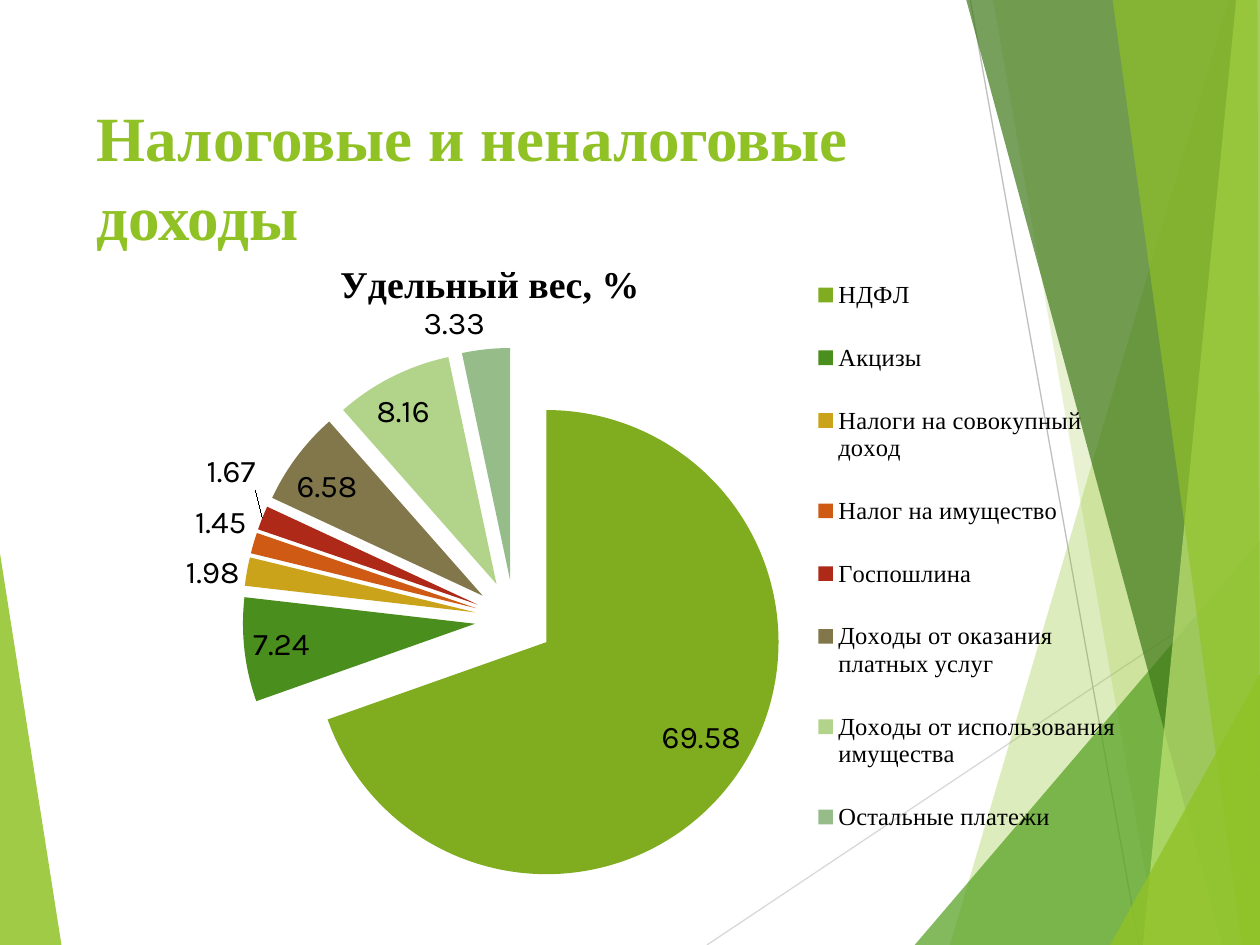
from dataclasses import dataclass

import lxml.etree
import pptx
import pptx.chart.data
import pptx.dml.color
import pptx.enum.chart
import pptx.enum.shapes
import pptx.enum.text
import pptx.oxml.ns
import pptx.oxml.xmlchemy
import pptx.util

Cm = pptx.util.Cm
Pt = pptx.util.Pt
RGBColor = pptx.dml.color.RGBColor
OxmlElement = pptx.oxml.xmlchemy.OxmlElement
qn = pptx.oxml.ns.qn

W, H = 25.4, 19.05
SERIF = "Times New Roman"
SANS = "Karla"

BLACK = RGBColor(0x00, 0x00, 0x00)
LIME = RGBColor(0x90, 0xC2, 0x26)
GREEN = RGBColor(0x54, 0xA0, 0x21)
FOREST = RGBColor(0x3F, 0x78, 0x19)
PALE_LIME = RGBColor(0xC0, 0xE4, 0x74)
GREY = RGBColor(0xBF, 0xBF, 0xBF)
LIGHT_GREY = RGBColor(0xD9, 0xD9, 0xD9)


@dataclass
class Facet:
    points: list[tuple[float, float]]
    color: RGBColor
    opacity: int


@dataclass
class Ray:
    start: tuple[float, float]
    end: tuple[float, float]
    color: RGBColor


@dataclass
class Slice:
    name: str
    value: float
    color: RGBColor


LEFT_FACET = Facet([(0, 11.15), (1.24, H), (0, H)], LIME, 85)
RAYS = [
    Ray((14.25, H), (W, 11.61), LIGHT_GREY),
    Ray((19.56, 0), (22.96, H), GREY),
]
RIGHT_FACETS = [
    Facet([(24.77, 0), (19.15, H), (W, H), (W, 0)], LIME, 30),
    Facet([(20.02, 0), (23.34, H), (W, H), (W, 0)], LIME, 20),
    Facet([(18.44, H), (W, 10.9), (W, H)], GREEN, 72),
    Facet([(19.48, 0), (24.64, H), (W, H), (W, 0)], FOREST, 70),
    Facet([(24.92, 0), (23.04, H), (W, H), (W, 0)], PALE_LIME, 70),
    Facet([(22.43, 0), (25.04, H), (W, H), (25.35, 0)], LIME, 65),
    Facet([(22.38, H), (W, 13.59), (W, H)], LIME, 80),
]
SLICES = [
    Slice("НДФЛ", 69.58, RGBColor(0x80, 0xAC, 0x20)),
    Slice("Акцизы", 7.24, RGBColor(0x4A, 0x8E, 0x1D)),
    Slice("Налоги на совокупный доход", 1.98, RGBColor(0xCB, 0xA3, 0x1A)),
    Slice("Налог на имущество", 1.45, RGBColor(0xCE, 0x5A, 0x14)),
    Slice("Госпошлина", 1.67, RGBColor(0xAE, 0x29, 0x17)),
    Slice("Доходы от оказания платных услуг", 6.58, RGBColor(0x81, 0x77, 0x4B)),
    Slice("Доходы от использования имущества", 8.16, RGBColor(0xB2, 0xD3, 0x8A)),
    Slice("Остальные платежи", 3.33, RGBColor(0x96, 0xBC, 0x8A)),
]


def draw_facet(slide, facet: Facet) -> None:
    points = [(Cm(x), Cm(y)) for x, y in facet.points]
    builder = slide.shapes.build_freeform(*points[0])
    builder.add_line_segments(points[1:])
    sp = builder.convert_to_shape()
    sp.shadow.inherit = False
    sp.line.fill.background()
    sp.fill.solid()
    sp.fill.fore_color.rgb = facet.color
    clr = sp._element.spPr.find(qn("a:solidFill")).find(qn("a:srgbClr"))
    lxml.etree.SubElement(clr, qn("a:alpha"), val=str(facet.opacity * 1000))


def draw_ray(slide, ray: Ray) -> None:
    ends = [Cm(v) for v in (*ray.start, *ray.end)]
    line = slide.shapes.add_connector(pptx.enum.shapes.MSO_CONNECTOR.STRAIGHT, *ends)
    line.line.color.rgb = ray.color
    line.line.width = Pt(0.75)
    lxml.etree.SubElement(line._element.spPr, qn("a:effectLst"))


def write_title(slide, text: str) -> None:
    title = slide.shapes.title
    title.left, title.top, title.width, title.height = Cm(1.7), Cm(1.7), Cm(19), Cm(3.66)
    tf = title.text_frame
    tf.text = text
    tf.word_wrap = True
    tf.auto_size = pptx.enum.text.MSO_AUTO_SIZE.NONE
    tf.vertical_anchor = pptx.enum.text.MSO_ANCHOR.TOP
    tf.margin_top = Cm(0.2)
    p = tf.paragraphs[0]
    p.alignment = pptx.enum.text.PP_ALIGN.LEFT
    p.line_spacing = 1.05
    set_font(p.font, SERIF, 36, LIME, True)
    slide.shapes._spTree.append(title._element)


def set_font(font, name: str, size: float, color: RGBColor, bold: bool = False) -> None:
    font.name, font.size, font.bold = name, Pt(size), bold
    font.color.rgb = color


def chart_layout(inner: bool = False, **fractions: float):
    """Return a manual layout in fractions of the chart frame."""
    layout = OxmlElement("c:layout")
    manual = lxml.etree.SubElement(layout, qn("c:manualLayout"))
    values = {"layoutTarget": "inner"} if inner else {}
    values |= {"xMode": "edge", "yMode": "edge"} | fractions
    for tag, value in values.items():
        lxml.etree.SubElement(manual, qn("c:" + tag), val=str(value))
    return layout


def place(parent, layout, after: str = "") -> None:
    """Put the layout after the named child, or first, replacing any other."""
    for old in parent.findall(qn("c:layout")):
        parent.remove(old)
    if after:
        parent.find(qn(after)).addnext(layout)
    else:
        parent.insert(0, layout)


def draw_pie(slide, slices: list[Slice], heading: str) -> None:
    data = pptx.chart.data.CategoryChartData(number_format="0.00")
    data.categories = [s.name for s in slices]
    data.add_series(heading, [s.value for s in slices])
    chart = slide.shapes.add_chart(
        pptx.enum.chart.XL_CHART_TYPE.PIE,
        Cm(1.7), Cm(4.11), Cm(22.81), Cm(14.2), data,
    ).chart
    set_font(chart.font, SANS, 18, BLACK)

    chart.has_title = True
    tf = chart.chart_title.text_frame
    tf.text = heading
    set_font(tf.paragraphs[0].runs[0].font, SERIF, 21.6, BLACK, True)
    place(chart.chart_title._element, chart_layout(x=0.22, y=0.07), "c:tx")

    chart.has_legend = True
    legend = chart.legend
    legend.position = pptx.enum.chart.XL_LEGEND_POSITION.RIGHT
    legend.include_in_layout = False
    set_font(legend.font, SERIF, 14, BLACK)
    place(legend._element, chart_layout(x=0.64, y=0.06, w=0.28, h=0.88), "c:legendPos")

    plot = chart.plots[0]
    plot.vary_by_categories = True
    place(plot._element.getparent(), chart_layout(True, x=0.14, y=0.2, w=0.48, h=0.78))

    series = plot.series[0]
    explosion = OxmlElement("c:explosion")
    explosion.set("val", "17")
    series._element.find(qn("c:tx")).addnext(explosion)
    for i, s in enumerate(slices):
        fill = series.points[i].format.fill
        fill.solid()
        fill.fore_color.rgb = s.color

    labels = series.data_labels
    labels.show_value = True
    labels.number_format = "0.00"
    labels.number_format_is_linked = False
    labels.position = pptx.enum.chart.XL_LABEL_POSITION.BEST_FIT
    set_font(labels.font, SANS, 18, BLACK)


def main() -> None:
    prs = pptx.Presentation()
    prs.slide_width, prs.slide_height = Cm(W), Cm(H)
    slide = prs.slides.add_slide(prs.slide_layouts[5])
    draw_facet(slide, LEFT_FACET)
    for ray in RAYS:
        draw_ray(slide, ray)
    for facet in RIGHT_FACETS:
        draw_facet(slide, facet)
    write_title(slide, "Налоговые и неналоговые доходы")
    draw_pie(slide, SLICES, "Удельный вес, %")
    prs.save("out.pptx")


if __name__ == "__main__":
    main()
